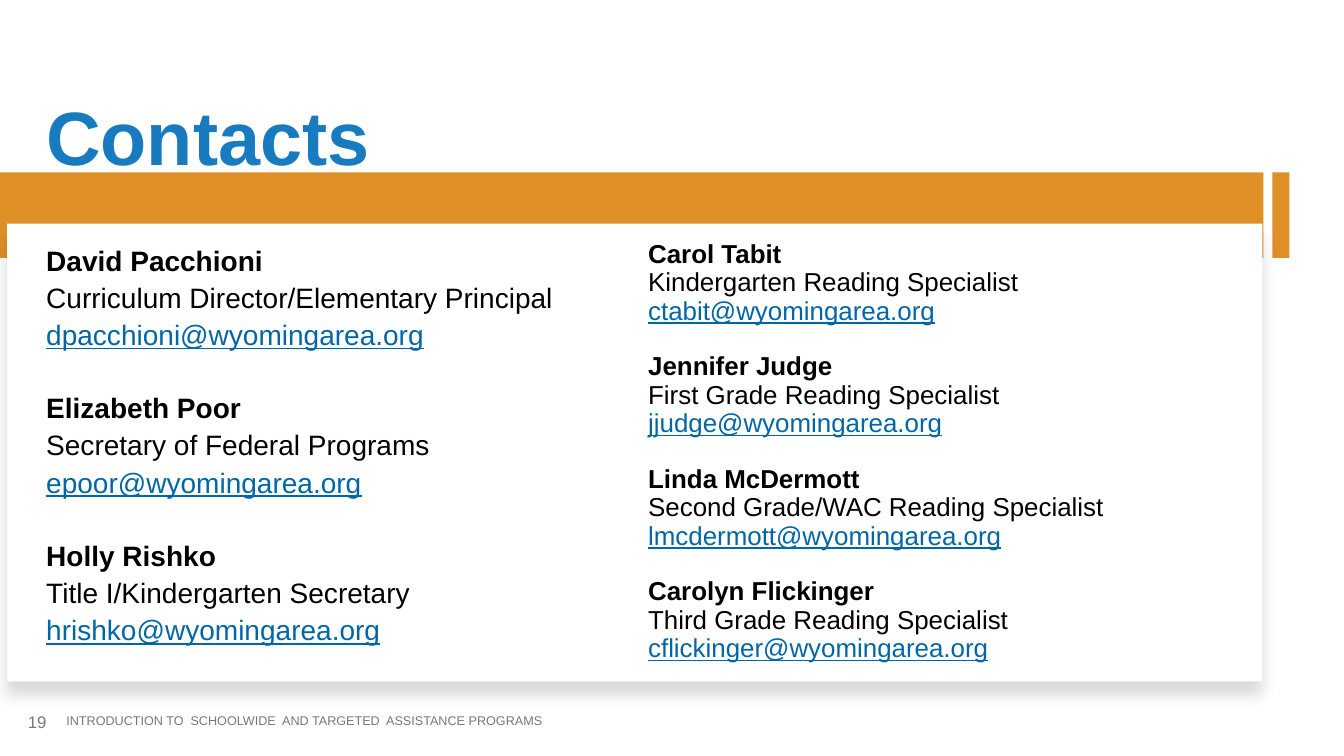
from lxml.etree import SubElement
from pptx import Presentation
from pptx.dml.color import RGBColor
from pptx.enum.shapes import MSO_SHAPE
from pptx.enum.text import MSO_ANCHOR, PP_ALIGN
from pptx.oxml.ns import qn
from pptx.util import Inches, Pt

COLORS = {
    "title": "187BC0",
    "bar": "DE9027",
    "card": "FFFFFF",
    "text": "000000",
    "email": "0066A6",
    "footer": "787878",
    "shadow": "000000",
}
OFFICE_CONTACTS = [
    ("David Pacchioni", "Curriculum Director/Elementary Principal", "dpacchioni@wyomingarea.org"),
    ("Elizabeth Poor", "Secretary of Federal Programs", "epoor@wyomingarea.org"),
    ("Holly Rishko", "Title I/Kindergarten Secretary", "hrishko@wyomingarea.org"),
]
READING_SPECIALISTS = [
    ("Carol Tabit", "Kindergarten Reading Specialist", "ctabit@wyomingarea.org"),
    ("Jennifer Judge", "First Grade Reading Specialist", "jjudge@wyomingarea.org"),
    ("Linda McDermott", "Second Grade/WAC Reading Specialist", "lmcdermott@wyomingarea.org"),
    ("Carolyn Flickinger", "Third Grade Reading Specialist", "cflickinger@wyomingarea.org"),
]
CONTACT_STYLES = [
    {"color": "text", "bold": True},
    {"color": "text"},
    {"color": "email", "underline": True},
]


def add_rectangle(page, left, top, width, height, color):
    shape = page.shapes.add_shape(
        MSO_SHAPE.RECTANGLE, Inches(left), Inches(top), Inches(width), Inches(height))
    shape.shadow.inherit = False
    shape.fill.solid()
    shape.fill.fore_color.rgb = RGBColor.from_string(COLORS[color])
    shape.line.fill.background()
    return shape


def add_drop_shadow(shape, blur, distance, opacity):
    """Cast a soft shadow straight down; opacity is in percent."""
    effects = shape.fill._xPr.find(qn("a:effectLst"))
    shadow = SubElement(effects, qn("a:outerShdw"), {
        "blurRad": str(Pt(blur)), "dist": str(Pt(distance)),
        "dir": "5400000", "algn": "t", "rotWithShape": "0"})
    color = SubElement(shadow, qn("a:srgbClr"), val=COLORS["shadow"])
    SubElement(color, qn("a:alpha"), val=str(opacity * 1000))


def add_text_box(page, left, top, width, height, anchor):
    box = page.shapes.add_textbox(Inches(left), Inches(top), Inches(width), Inches(height))
    frame = box.text_frame
    frame.word_wrap = True
    frame.vertical_anchor = anchor
    return frame


def write_line(para, text, size, color, line_spacing=0.9, align=PP_ALIGN.LEFT, **font_format):
    para.line_spacing = line_spacing
    para.alignment = align
    span = para.add_run()
    span.text = text
    span.font.color.rgb = RGBColor.from_string(COLORS[color])
    for name, value in {"name": "Arial", "size": Pt(size), **font_format}.items():
        setattr(span.font, name, value)


def add_contacts(page, place, contacts, size, line_spacing, line_gap, contact_gap):
    """List contacts as name, role and e-mail; gaps are in points."""
    frame = add_text_box(page, *place, MSO_ANCHOR.TOP)
    for number, contact in enumerate(contacts):
        for row, (text, style) in enumerate(zip(contact, CONTACT_STYLES)):
            is_first = number == row == 0
            para = frame.paragraphs[0] if is_first else frame.add_paragraph()
            if not is_first:
                para.space_before = Pt(line_gap if row else contact_gap)
            write_line(para, text, size, line_spacing=line_spacing, **style)


def main():
    deck = Presentation()
    deck.slide_width, deck.slide_height = Inches(13.33), Inches(7.5)
    page = deck.slides.add_slide(deck.slide_layouts[6])

    title = add_text_box(page, 0.36, 0.4, 12.61, 1.45, MSO_ANCHOR.BOTTOM)
    write_line(title.paragraphs[0], "Contacts", 54, "title", bold=True)

    add_rectangle(page, 12.62, 1.71, 0.17, 0.85, "bar")
    add_rectangle(page, 0, 1.71, 12.53, 0.85, "bar")
    card = add_rectangle(page, 0.07, 2.22, 12.45, 4.54, "card")
    add_drop_shadow(card, blur=11, distance=10, opacity=15)

    add_contacts(page, (0.36, 2.4, 6.18, 4.3), OFFICE_CONTACTS, 20, 0.9, 5, 30.7)
    add_contacts(page, (6.33, 2.39, 6.05, 4.37), READING_SPECIALISTS, 18.5, 0.7, 4.7, 24.3)

    footer = add_text_box(page, 0.56, 6.96, 6.52, 0.4, MSO_ANCHOR.MIDDLE)
    write_line(footer.paragraphs[0],
               "INTRODUCTION TO  SCHOOLWIDE  AND TARGETED  ASSISTANCE PROGRAMS", 9, "footer")
    number = add_text_box(page, 0, 6.96, 0.56, 0.4, MSO_ANCHOR.MIDDLE)
    write_line(number.paragraphs[0], "19", 12, "footer", 1.0, PP_ALIGN.RIGHT)

    deck.save("out.pptx")


if __name__ == "__main__":
    main()
